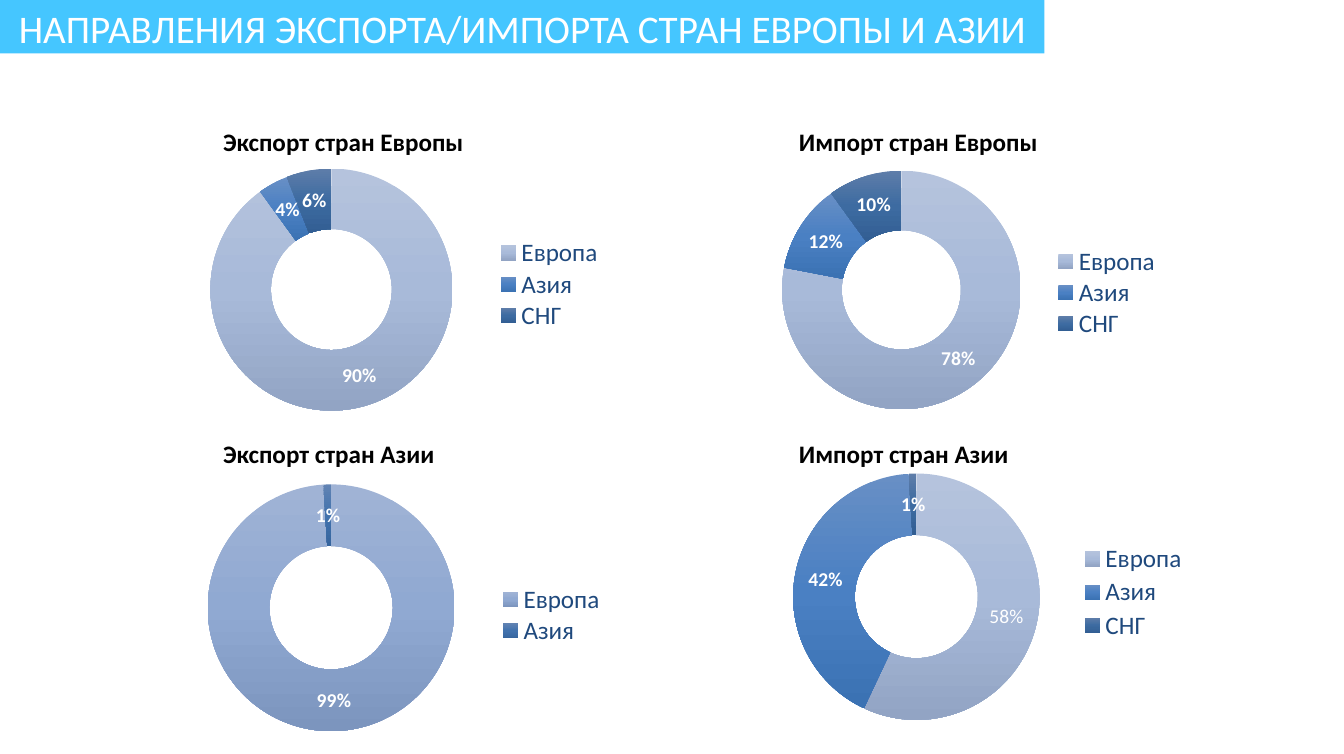
from dataclasses import dataclass

from lxml import etree
from pptx import Presentation
from pptx.chart.data import CategoryChartData
from pptx.dml.color import RGBColor
from pptx.enum.chart import XL_CHART_TYPE as ChartType, XL_LEGEND_POSITION as LegendPosition
from pptx.enum.text import MSO_ANCHOR as Anchor, MSO_AUTO_SIZE as AutoSize, PP_ALIGN as Align
from pptx.oxml import parse_xml
from pptx.oxml.ns import nsdecls, qn
from pptx.util import Inches, Pt

TITLE = "НАПРАВЛЕНИЯ ЭКСПОРТА/ИМПОРТА СТРАН ЕВРОПЫ И АЗИИ"
REGIONS = ("Европа", "Азия", "СНГ")

# Frames are percentages of the slide; plot and legend are percentages of the chart.
CHARTS = [
    dict(caption="Экспорт стран Европы", column=0, row=0, values=(90, 4, 6),
         frame=(8.53, 20.4, 37.47, 37.07), plot=(19, 5.3, 48.1, 86.6),
         legend=(75.3, 29.7, 22, 34)),
    dict(caption="Импорт стран Европы", column=1, row=0, values=(78, 12, 10),
         frame=(49.74, 18.4, 37.47, 40), plot=(22.5, 10.6, 47.5, 79.1),
         legend=(76, 35.3, 22, 31.5)),
    dict(caption="Экспорт стран Азии", column=0, row=1, values=(99, 1),
         frame=(5.31, 63.6, 44.8, 34), plot=(22.6, 1.9, 41.1, 96.3),
         legend=(70.2, 40.4, 19, 25)),
    dict(caption="Импорт стран Азии", column=1, row=1, values=(57, 42, 1),
         frame=(49.74, 60.53, 41.36, 40), plot=(22.4, 5.7, 44.4, 81.7),
         legend=(73.6, 28, 20, 34), first_label="58%"),
]
CAPTION_COLUMNS = (15.86, 58.71)
CAPTION_ROWS = (16.13, 57.47)
CAPTION_SIZE = (19.5, 5.33)
BANNER = (0, 0, 77.71, 7.07)


@dataclass(frozen=True)
class Theme:
    font: str = "Calibri"
    banner: str = "00B2FF"
    banner_opacity: int = 73
    white: str = "FFFFFF"
    black: str = "000000"
    legend: str = "1F497D"
    title_size: int = 28
    text_size: int = 18
    label_size: int = 14
    # Top, middle and bottom colour of each slice, by number of slices
    slices: tuple = (
        (2, (("A0B3D5", "90A9D2", "7C95BE"), ("6183B3", "4172AD", "36659E"))),
        (3, (("B5C3DD", "A8BAD9", "92A4C4"), ("688FC5", "4A80C3", "3B72B3"),
             ("5E7DA9", "3D6BA1", "325E93"))),
    )


THEME = Theme()

presentation = Presentation()
presentation.slide_width, presentation.slide_height = Inches(13.37), Inches(7.5)


def slide_lengths(left, top, width, height):
    """Turn percentages of the slide into lengths."""
    across, down = presentation.slide_width, presentation.slide_height
    return [int(share * side / 100)
            for share, side in zip((left, top, width, height), (across, down) * 2)]


def style_font(font, size, color, bold=False):
    font.name, font.size, font.bold = THEME.font, Pt(size), bold
    font.color.rgb = RGBColor.from_string(color)


def write_text(frame, text, size, color, bold=False, wrap=True, align=None, spacing=None):
    frame.word_wrap = wrap
    paragraph = frame.paragraphs[0]
    paragraph.alignment, paragraph.line_spacing = align, spacing
    run = paragraph.add_run()
    run.text = text
    style_font(run.font, size, color, bold)


def set_layout(parent, index, shares, inner=False):
    """Place a chart part by hand, as percentages of the chart."""
    for old in parent.findall(qn("c:layout")):
        parent.remove(old)
    layout = parse_xml(f"<c:layout {nsdecls('c')}><c:manualLayout/></c:layout>")
    settings = [("layoutTarget", "inner")] if inner else []
    settings += [("xMode", "edge"), ("yMode", "edge")]
    settings += [(name, str(round(share / 100, 3))) for name, share in zip("xywh", shares)]
    for name, value in settings:
        etree.SubElement(layout[0], qn(f"c:{name}")).set("val", value)
    parent.insert(index, layout)


def shade_slice(point, colors):
    """Fill a slice with a vertical gradient of three stops."""
    point.format.fill.gradient()
    gradient = point.format.fill._xPr.find(qn("a:gradFill"))
    stops = "".join(f'<a:gs pos="{place * 50000}"><a:srgbClr val="{color}"/></a:gs>'
                    for place, color in enumerate(colors))
    gradient.getparent().replace(gradient, parse_xml(
        f'<a:gradFill {nsdecls("a")} rotWithShape="1"><a:gsLst>{stops}</a:gsLst>'
        '<a:lin ang="5400000" scaled="0"/></a:gradFill>'))


def add_doughnut(slide, values, frame, plot, legend, first_label=None):
    data = CategoryChartData()
    data.categories = REGIONS[:len(values)]
    data.add_series("Series 1", values)
    chart = slide.shapes.add_chart(ChartType.DOUGHNUT, *slide_lengths(*frame), data).chart
    chart.has_title = False
    style_font(chart.font, 10, THEME.black)

    ring = chart.plots[0]
    ring.vary_by_categories = True
    plot_area = chart._chartSpace.chart.plotArea
    set_layout(plot_area, 0, plot, inner=True)
    plot_area.find(".//" + qn("c:holeSize")).set("val", "75")

    chart.has_legend = True
    chart.legend.position = LegendPosition.BOTTOM
    chart.legend.include_in_layout = False
    style_font(chart.legend.font, THEME.text_size, THEME.legend)
    set_layout(chart.legend._element, 1, legend)

    series = ring.series[0]
    for index, colors in enumerate(dict(THEME.slices)[len(values)]):
        shade_slice(series.points[index], colors)
    labels = series.data_labels
    labels.show_percentage, labels.show_value = True, False
    labels.number_format, labels.number_format_is_linked = "0%", False
    style_font(labels.font, THEME.label_size, THEME.white, bold=True)
    if first_label:
        write_text(series.points[0].data_label.text_frame, first_label,
                   THEME.label_size, THEME.white)


def add_banner(slide):
    title = slide.shapes.title
    title.left, title.top, title.width, title.height = slide_lengths(*BANNER)
    title.fill.solid()
    title.fill.fore_color.rgb = RGBColor.from_string(THEME.banner)
    color = title._element.spPr.find(".//" + qn("a:srgbClr"))
    etree.SubElement(color, qn("a:alpha")).set("val", str(THEME.banner_opacity * 1000))
    frame = title.text_frame
    frame.auto_size, frame.vertical_anchor = AutoSize.NONE, Anchor.TOP
    frame.margin_left = frame.margin_right = frame.margin_top = frame.margin_bottom = Inches(0.1)
    write_text(frame, TITLE, THEME.title_size, THEME.white, align=Align.CENTER, spacing=0.9)


def add_caption(slide, text, column, row):
    place = (CAPTION_COLUMNS[column], CAPTION_ROWS[row])
    box = slide.shapes.add_textbox(*slide_lengths(*place, *CAPTION_SIZE))
    box.text_frame.auto_size = AutoSize.SHAPE_TO_FIT_TEXT
    write_text(box.text_frame, text, THEME.text_size, THEME.black,
               bold=True, wrap=False, align=Align.LEFT)


def main():
    slide = presentation.slides.add_slide(presentation.slide_layouts[5])
    add_banner(slide)
    for item in CHARTS:
        add_caption(slide, item["caption"], item["column"], item["row"])
        add_doughnut(slide, item["values"], item["frame"], item["plot"],
                     item["legend"], item.get("first_label"))
    presentation.save("out.pptx")


if __name__ == "__main__":
    main()
